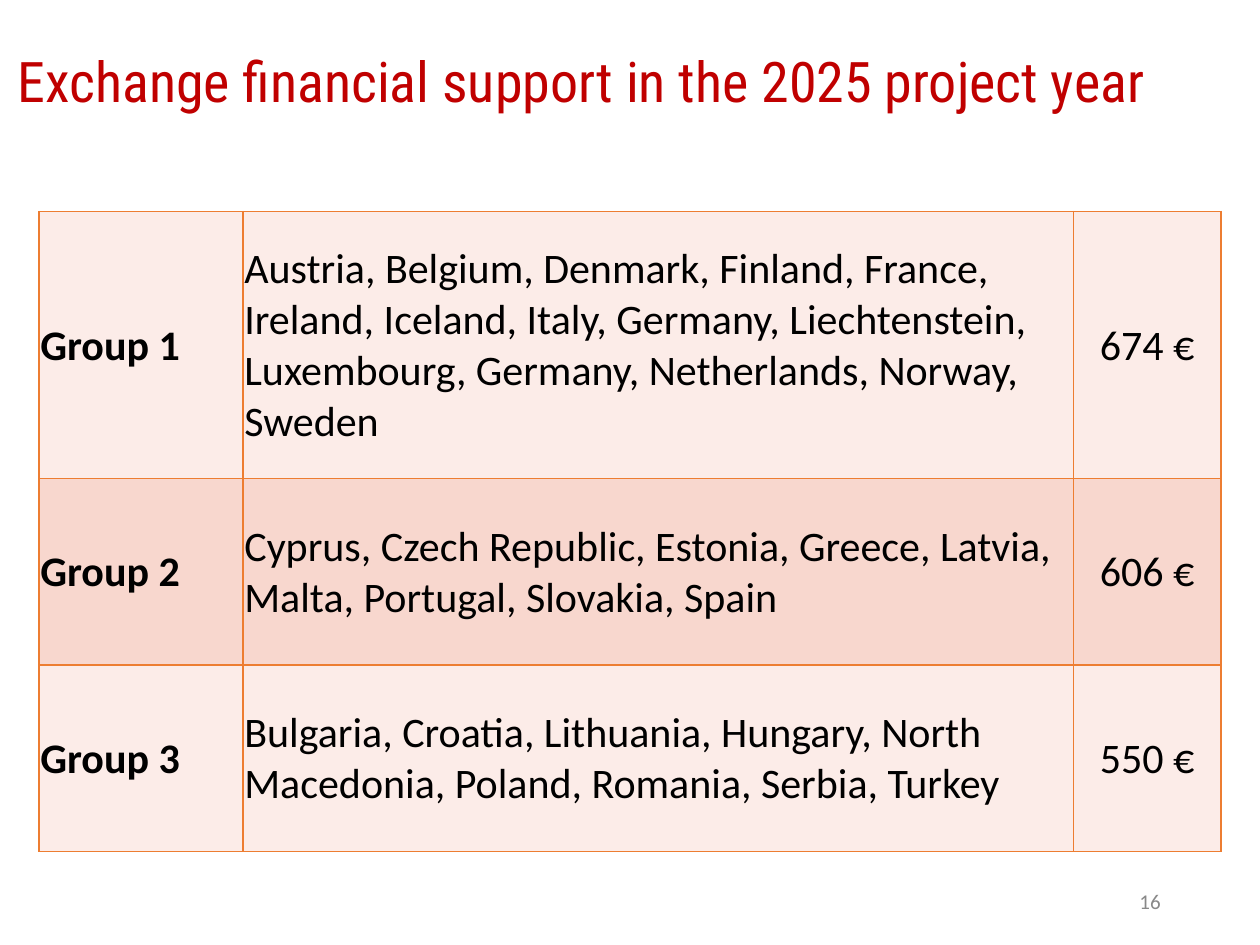
from dataclasses import dataclass

from lxml import etree
from pptx import Presentation
from pptx import util as u
from pptx.dml.color import RGBColor
from pptx.enum import text
from pptx.oxml.ns import qn


@dataclass(frozen=True)
class Theme:
    title_color: str = "C00000"
    body_color: str = "000000"
    number_color: str = "898989"
    border_color: str = "ED7D31"
    bands: tuple = ("FCECE8", "F8D7CE")
    title_font: str = "Roboto Condensed"
    body_font: str = "Calibri"
    title_size: int = 32
    body_size: int = 24
    number_size: int = 12
    border_width: int = 1


LEFT, CENTER, RIGHT = (text.PP_ALIGN.LEFT, text.PP_ALIGN.CENTER,
                       text.PP_ALIGN.RIGHT)


class SlideBuilder:
    def __init__(self, slide, theme):
        self.slide = slide
        self.theme = theme

    def style(self, paragraph, font, size, color, align=LEFT, bold=False):
        paragraph.alignment = align
        paragraph.font.name = font
        paragraph.font.size = u.Pt(size)
        paragraph.font.bold = bold
        paragraph.font.color.rgb = RGBColor.from_string(color)

    def label(self, words, box, font, size, color, align=LEFT):
        frame = self.slide.shapes.add_textbox(*map(u.Inches, box)).text_frame
        frame.word_wrap = True
        frame.vertical_anchor = text.MSO_ANCHOR.MIDDLE
        frame.text = words
        self.style(frame.paragraphs[0], font, size, color, align)

    def border(self, cell):
        properties = cell._tc.get_or_add_tcPr()
        for index, side in enumerate(("lnL", "lnR", "lnT", "lnB")):
            line = etree.Element(qn(f"a:{side}"),
                                 w=str(u.Pt(self.theme.border_width)))
            fill = etree.SubElement(line, qn("a:solidFill"))
            etree.SubElement(fill, qn("a:srgbClr"), val=self.theme.border_color)
            properties.insert(index, line)

    def table(self, rows, left, top, widths, heights):
        grid = self.slide.shapes.add_table(
            len(rows), len(widths), u.Inches(left), u.Inches(top),
            u.Inches(sum(widths)), u.Inches(sum(heights))).table
        for column, width in zip(grid.columns, widths):
            column.width = u.Inches(width)
        for row, height in zip(grid.rows, heights):
            row.height = u.Inches(height)
        for r, values in enumerate(rows):
            for c, value in enumerate(values):
                self.fill_cell(grid.cell(r, c), value,
                               self.theme.bands[r % len(self.theme.bands)],
                               CENTER if c == 2 else LEFT, bold=c == 0)

    def fill_cell(self, cell, value, color, align, bold):
        cell.text = value
        cell.vertical_anchor = text.MSO_ANCHOR.MIDDLE
        cell.margin_left = cell.margin_right = cell.margin_top = u.Inches(0.01)
        cell.margin_bottom = 0
        cell.fill.solid()
        cell.fill.fore_color.rgb = RGBColor.from_string(color)
        self.border(cell)
        self.style(cell.text_frame.paragraphs[0], self.theme.body_font,
                   self.theme.body_size, self.theme.body_color, align, bold)


GROUPS = [
    ("Group 1",
     "Austria, Belgium, Denmark, Finland, France, Ireland, Iceland, Italy, "
     "Germany, Liechtenstein, Luxembourg, Germany, Netherlands, Norway, Sweden",
     "674 €"),
    ("Group 2",
     "Cyprus, Czech Republic, Estonia, Greece, Latvia, Malta, Portugal, "
     "Slovakia, Spain",
     "606 €"),
    ("Group 3",
     "Bulgaria, Croatia, Lithuania, Hungary, North Macedonia, Poland, "
     "Romania, Serbia, Turkey",
     "550 €"),
]


def main():
    deck = Presentation()
    deck.slide_width, deck.slide_height = u.Inches(10), u.Inches(7.5)
    theme = Theme()
    builder = SlideBuilder(deck.slides.add_slide(deck.slide_layouts[6]), theme)

    # Slide number
    builder.label("16", (7.06, 6.95, 2.25, 0.4), theme.body_font,
                  theme.number_size, theme.number_color, RIGHT)

    # Support by country group
    builder.table(GROUPS, 0.31, 1.68, widths=(1.62, 6.59, 1.17),
                  heights=(2.12, 1.48, 1.48))

    # Title
    builder.label("Exchange financial support in the 2025 project year",
                  (0.04, 0.27, 9.96, 0.73), theme.title_font,
                  theme.title_size, theme.title_color)

    deck.save("out.pptx")


if __name__ == "__main__":
    main()
